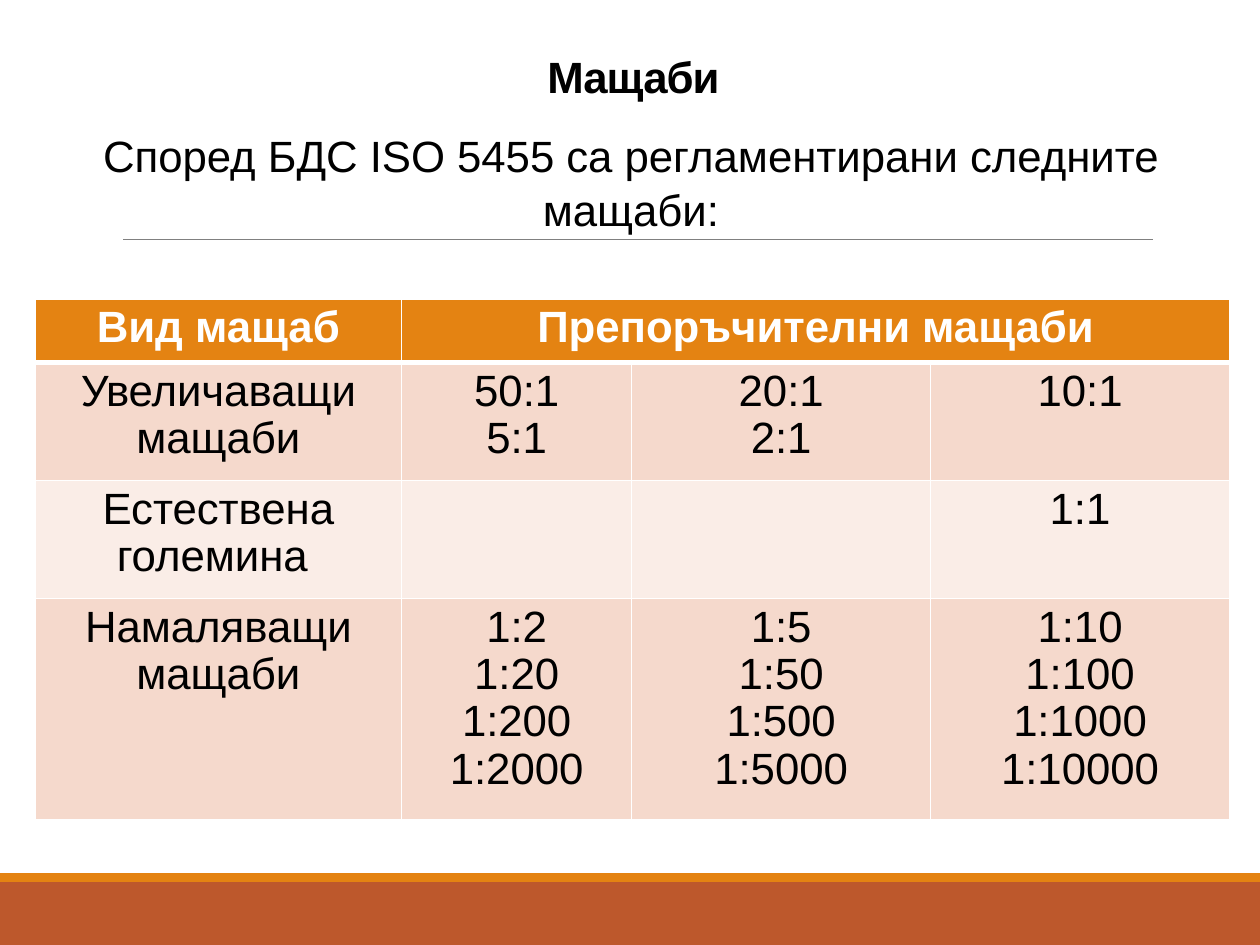
from dataclasses import dataclass
from lxml.etree import SubElement
from pptx import Presentation
from pptx.dml.color import RGBColor
from pptx.enum.shapes import MSO_CONNECTOR, MSO_SHAPE
from pptx.enum.text import PP_ALIGN
from pptx.oxml.ns import qn
from pptx.util import Pt


@dataclass(frozen=True)
class Theme:
    font: str = "Arial"
    size: float = 25
    black: str = "000000"
    white: str = "FFFFFF"
    gray: str = "808080"
    rust: str = "BD582C"
    orange: str = "E48312"
    dark: str = "F5D9CC"
    light: str = "FAEDE7"


class Deck:
    def __init__(self, theme, slide):
        self.theme = theme
        self.slide = slide

    def paint(self, fill, color):
        fill.solid()
        fill.fore_color.rgb = RGBColor.from_string(color)

    def letter(self, frame, text, color, bold=False, gap=1.0):
        frame.text = text
        for para in frame.paragraphs:
            para.alignment = PP_ALIGN.CENTER
            para.line_spacing = gap
            font = para.font
            font.name = self.theme.font
            font.size = Pt(self.theme.size)
            font.bold = bold
            font.color.rgb = RGBColor.from_string(color)

    def band(self, box, color):
        shape = self.slide.shapes.add_shape(MSO_SHAPE.RECTANGLE, *map(Pt, box))
        shape.shadow.inherit = False
        self.paint(shape.fill, color)
        shape.line.fill.background()

    def rule(self, left, right, y):
        ends = map(Pt, (left, y, right, y))
        line = self.slide.shapes.add_connector(MSO_CONNECTOR.STRAIGHT, *ends)
        line.line.color.rgb = RGBColor.from_string(self.theme.gray)
        line.line.width = Pt(0.5)
        SubElement(line._element.spPr, qn("a:effectLst"))

    def text(self, box, words, bold=False, gap=1.0, track=0):
        frame = self.slide.shapes.add_textbox(*map(Pt, box)).text_frame
        frame.word_wrap = True
        self.letter(frame, words, self.theme.black, bold, gap)
        if track:
            for run in frame.paragraphs[0].runs:
                run.font._element.set("spc", str(int(track * 100)))

    def edges(self, cell, top, base):
        props = cell._tc.get_or_add_tcPr()
        for side, width in (("L", 1), ("R", 1), ("T", top), ("B", base)):
            line = SubElement(props, qn(f"a:ln{side}"), w=str(Pt(width)))
            fill = SubElement(line, qn("a:solidFill"))
            SubElement(fill, qn("a:srgbClr"), val=self.theme.white)

    def table(self, left, top, cols, rows, data):
        box = map(Pt, (left, top, sum(cols), sum(rows)))
        table = self.slide.shapes.add_table(len(rows), len(cols), *box).table
        for col, width in zip(table.columns, cols):
            col.width = Pt(width)
        for row, height in zip(table.rows, rows):
            row.height = Pt(height)
        look = self.theme
        for r, line in enumerate(data):
            head = r == 0
            back = look.orange if head else look.dark if r % 2 else look.light
            for c, words in enumerate(line):
                cell = table.cell(r, c)
                self.edges(cell, 3 if r == 1 else 1, 3 if head else 1)
                self.paint(cell.fill, back)
                ink = look.white if head else look.black
                self.letter(cell.text_frame, words, ink, head, 0.97)
        table.cell(0, 1).merge(table.cell(0, len(cols) - 1))


def main():
    show = Presentation()
    show.slide_width, show.slide_height = Pt(720), Pt(540)
    theme = Theme()
    deck = Deck(theme, show.slides.add_slide(show.slide_layouts[6]))

    deck.band((0, 504, 720, 36), theme.rust)
    deck.band((0, 499, 720, 5), theme.orange)
    deck.rule(70.5, 659, 136.8)
    deck.text((65, 25, 594, 36), "Мащаби", bold=True, track=-0.5)
    deck.text((35, 69, 651, 76),
              "Според БДС ISO 5455 са регламентирани следните мащаби:",
              gap=1.03)
    deck.table(20, 170.8, (209.5, 131.5, 170.8, 170.8),
               (36.3, 67.4, 67.4, 126.6), (
        ("Вид мащаб", "Препоръчителни мащаби", "", ""),
        ("Увеличаващи мащаби", "50:1\n5:1", "20:1\n2:1", "10:1"),
        ("Естествена големина ", "", "", "1:1"),
        ("Намаляващи мащаби", "1:2\n1:20\n1:200\n1:2000",
         "1:5\n1:50\n1:500\n1:5000", "1:10\n1:100\n1:1000\n1:10000"),
    ))
    show.save("out.pptx")


if __name__ == "__main__":
    main()
